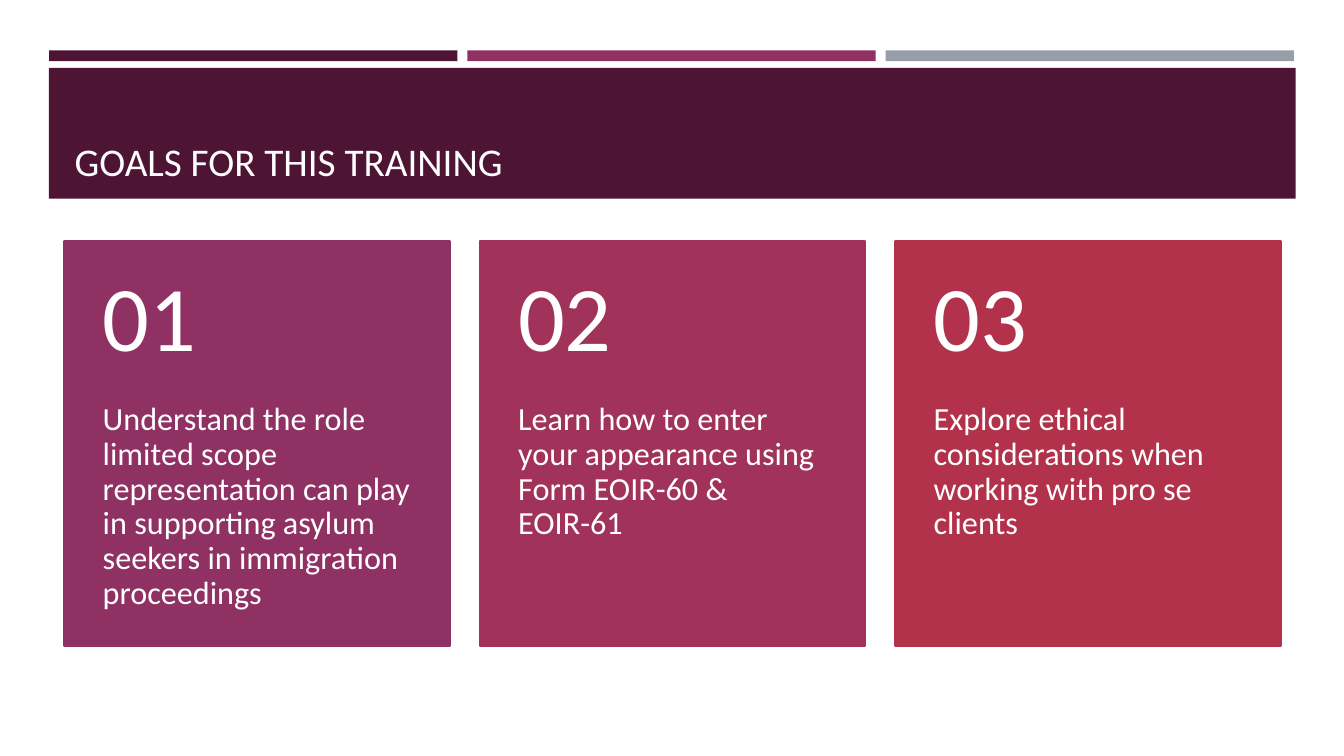
from pptx import Presentation
from pptx.dml.color import RGBColor
from pptx.enum import shapes, text
from pptx.util import Cm, Pt

PLUM = RGBColor(0x4D, 0x14, 0x34)
MAGENTA = RGBColor(0x90, 0x31, 0x63)
ROSE = RGBColor(0xA1, 0x32, 0x5A)
RED = RGBColor(0xB2, 0x32, 0x4B)
GREY = RGBColor(0x96, 0x9F, 0xA7)
WHITE = RGBColor(0xFF, 0xFF, 0xFF)
TITLE_WHITE = RGBColor(0xFF, 0xFE, 0xFF)

TITLE_ONLY = 5
MARGIN = 1.63
STRIPE_LEFT, STRIPE_STEP = 1.24, 10.54
CARD_STEP, CARD_WIDTH = 10.47, 9.7
CARD_TOP, NUMBER_HEIGHT, GOAL_HEIGHT = 6.07, 4.08, 6.13

GOALS = [
    (MAGENTA, "Understand the role limited scope representation can play "
              "in supporting asylum seekers in immigration proceedings"),
    (ROSE, "Learn how to enter your appearance using Form EOIR-60 & EOIR-61"),
    (RED, "Explore ethical considerations when working with pro se clients"),
]


def write(frame, words, size, color=WHITE, anchor=text.MSO_ANCHOR.TOP,
          insets=(0.25, 0.13, 0.25, 0.13), line_spacing=1.0):
    """Fill a text frame with one left-aligned paragraph; insets are in cm."""
    frame.word_wrap = True
    frame.auto_size = text.MSO_AUTO_SIZE.NONE
    frame.vertical_anchor = anchor
    (frame.margin_left, frame.margin_top,
     frame.margin_right, frame.margin_bottom) = map(Cm, insets)
    para = frame.paragraphs[0]
    para.alignment = text.PP_ALIGN.LEFT
    para.line_spacing = line_spacing
    para.space_before = para.space_after = Pt(0)
    span = para.add_run()
    span.text = words
    span.font.name = "Calibri"
    span.font.size = Pt(size)
    span.font.color.rgb = color


class GoalsSlide:
    def __init__(self, deck):
        self.page = deck.slides.add_slide(deck.slide_layouts[TITLE_ONLY])

    def block(self, left, top, width, height, color, outlined=False):
        box = self.page.shapes.add_shape(
            shapes.MSO_SHAPE.RECTANGLE, Cm(left), Cm(top), Cm(width), Cm(height))
        box.shadow.inherit = False
        box.fill.solid()
        box.fill.fore_color.rgb = color
        if outlined:
            box.line.color.rgb = color
            box.line.width = Pt(1.75)
        else:
            box.line.fill.background()

    def label(self, left, top, width, height, words, **style):
        box = self.page.shapes.add_textbox(Cm(left), Cm(top), Cm(width), Cm(height))
        write(box.text_frame, words, **style)

    def title(self, words):
        """Place the title in front of the shapes drawn so far."""
        box = self.page.shapes.title
        box.left, box.top, box.width, box.height = map(Cm, (MARGIN, 1.96, 30.63, 2.82))
        write(box.text_frame, words, 28, TITLE_WHITE, text.MSO_ANCHOR.BOTTOM)
        box.element.getparent().append(box.element)

    def card(self, left, number, goal, color):
        self.block(left, CARD_TOP, CARD_WIDTH, NUMBER_HEIGHT + GOAL_HEIGHT, color,
                   outlined=True)
        self.label(left, CARD_TOP + NUMBER_HEIGHT, CARD_WIDTH, GOAL_HEIGHT, goal,
                   size=23, insets=(0.96, 0, 0.96, 0.91), line_spacing=0.9)
        self.label(left, CARD_TOP, CARD_WIDTH, NUMBER_HEIGHT, f"{number:02}",
                   size=66, anchor=text.MSO_ANCHOR.MIDDLE,
                   insets=(0.96, 0.46, 0.96, 0.46), line_spacing=0.9)


def main():
    deck = Presentation()
    deck.slide_width, deck.slide_height = Cm(33.87), Cm(19.05)
    slide = GoalsSlide(deck)
    for index, color in enumerate((PLUM, MAGENTA, GREY)):
        slide.block(STRIPE_LEFT + index * STRIPE_STEP, 1.27, 10.29, 0.27, color)
    slide.block(1.23, 1.71, 31.42, 3.3, PLUM)
    slide.title("GOALS FOR THIS TRAINING")
    for index, (color, goal) in enumerate(GOALS):
        slide.card(MARGIN + index * CARD_STEP, index + 1, goal, color)
    deck.save("out.pptx")


if __name__ == "__main__":
    main()
